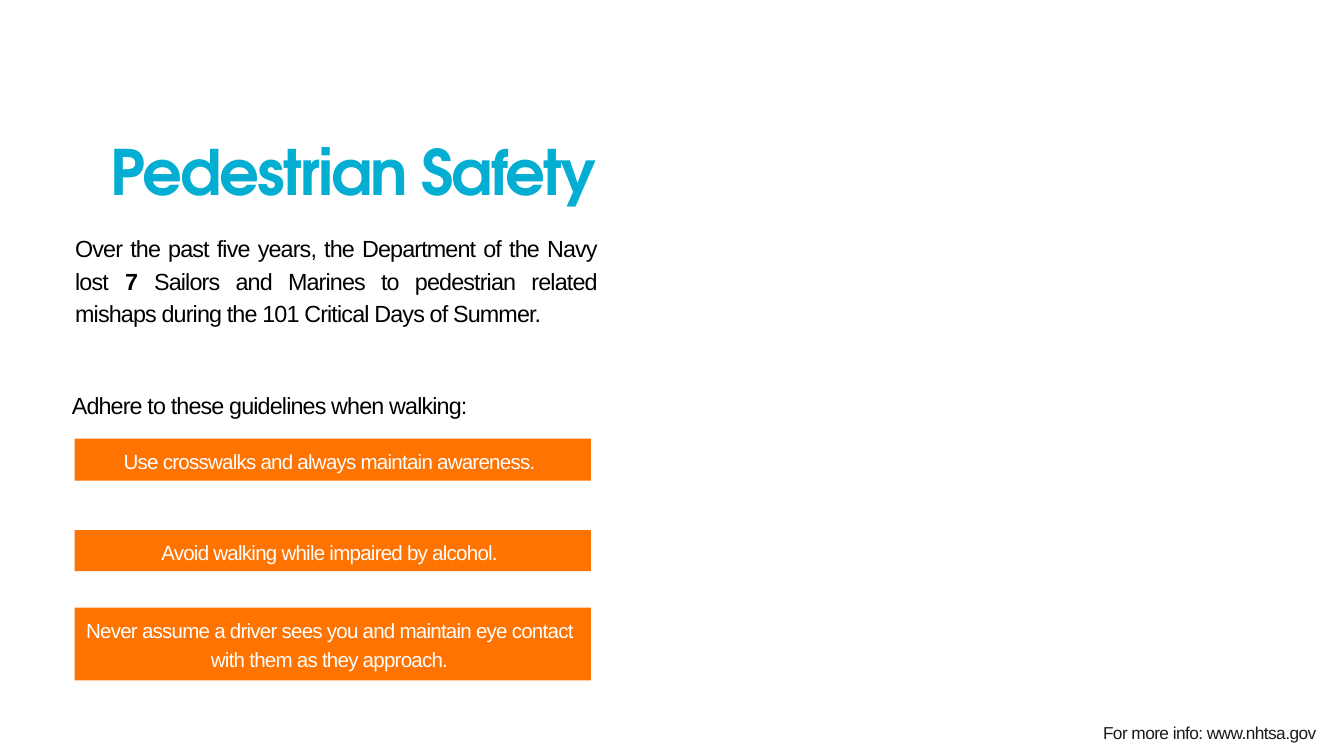
from pptx import Presentation
from pptx.dml.color import RGBColor
from pptx.enum.shapes import MSO_SHAPE
from pptx.enum.text import MSO_ANCHOR, PP_ALIGN
from pptx.util import Pt

CYAN = RGBColor(0x03, 0xAE, 0xD2)
ORANGE = RGBColor(0xFF, 0x73, 0x00)
BLACK = RGBColor(0x00, 0x00, 0x00)
WHITE = RGBColor(0xFF, 0xFF, 0xFF)
CHARCOAL = RGBColor(0x1B, 0x1B, 0x1B)

# Text styles: font attributes, letter spacing, line pitch and alignment
TITLE = dict(font=dict(name="TeX Gyre Adventor", size=Pt(67), bold=True),
             color=CYAN, spacing=-2.2, pitch=67, align=PP_ALIGN.CENTER)
BODY = dict(font=dict(name="Arial", size=Pt(25)),
            color=BLACK, spacing=-0.9, pitch=35, align=PP_ALIGN.JUSTIFY)
BAR = dict(font=dict(name="Arial", size=Pt(22)),
           color=WHITE, spacing=-0.8, pitch=30.8, align=PP_ALIGN.CENTER)
FOOTER = dict(font=dict(name="Arial", size=Pt(18.5)),
              color=CHARCOAL, spacing=-0.6, pitch=18.5, align=PP_ALIGN.CENTER)

# Guideline bars: top offset, height, text inset, text
GUIDELINES = [
    (0, 45, 6.5, "Use crosswalks and always maintain awareness."),
    (98, 44, 6, "Avoid walking while impaired by alcohol."),
    (181, 78, 7, "Never assume a driver sees you and maintain eye contact "
                 "with them as they approach."),
]


def add_text(s, box, runs, style):
    """Place one paragraph; runs are (text, bold) pairs."""
    tf = s.shapes.add_textbox(*map(Pt, box)).text_frame
    frame = dict(word_wrap=True, vertical_anchor=MSO_ANCHOR.TOP, margin_left=0,
                 margin_top=0, margin_right=0, margin_bottom=0)
    for key, value in frame.items():
        setattr(tf, key, value)
    p = tf.paragraphs[0]
    p.alignment = style["align"]
    p.line_spacing = Pt(style["pitch"])
    for text, bold in runs:
        r = p.add_run()
        r.text = text
        for key, value in {"bold": bold, **style["font"]}.items():
            setattr(r.font, key, value)
        r.font.color.rgb = style["color"]
        r._r.get_or_add_rPr().set("spc", str(round(style["spacing"] * 100)))


def add_heading(s, box):
    add_text(s, box, [("Pedestrian Safety", True)], TITLE)


def add_intro(s, box):
    add_text(s, box, [
        ("Over the past five years, the Department of the Navy lost ", False),
        ("7", True),
        (" Sailors and Marines to pedestrian related mishaps during the "
         "101 Critical Days of Summer.", False),
    ], BODY)


def add_guidelines(s, box):
    left, top, width, _ = box
    # Lead-in line
    add_text(s, (left - 3, top, 559, 33),
             [("Adhere to these guidelines when walking:", False)], BODY)
    # Bars with their labels
    first_bar = top + 56
    for offset, height, inset, text in GUIDELINES:
        y = first_bar + offset
        sp = s.shapes.add_shape(MSO_SHAPE.RECTANGLE, Pt(left), Pt(y),
                                Pt(width), Pt(height))
        sp.shadow.inherit = False
        sp.fill.solid()
        sp.fill.fore_color.rgb = ORANGE
        sp.line.fill.background()
        add_text(s, (left + 5, y + inset, 536, height - 2 * inset),
                 [(text, False)], BAR)


def add_footer(s, box):
    add_text(s, box, [("For more info: www.nhtsa.gov", False)], FOOTER)


def main():
    prs = Presentation()
    prs.slide_width, prs.slide_height = Pt(1440), Pt(810)
    s = prs.slides.add_slide(prs.slide_layouts[6])
    add_heading(s, (80.5, 155.5, 597, 81))
    add_intro(s, (80.5, 246, 559, 137))
    add_guidelines(s, (80, 414, 553, 315))
    add_footer(s, (1095, 778, 402, 19))
    prs.save("out.pptx")


if __name__ == "__main__":
    main()
